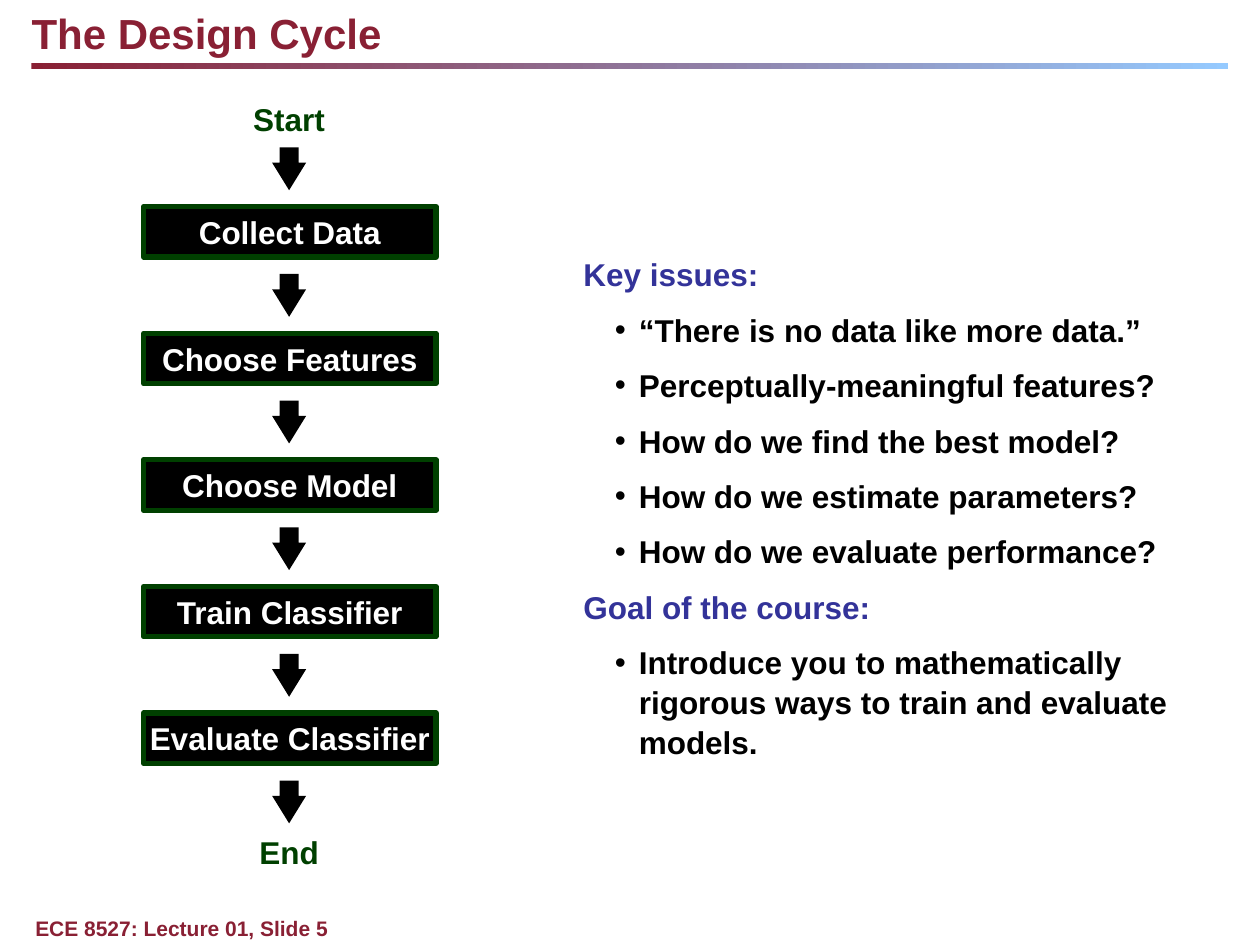
import pptx
import pptx.dml.color
import pptx.enum.shapes
import pptx.enum.text
import pptx.oxml.ns
import pptx.util
from lxml import etree

Inches = pptx.util.Inches
Pt = pptx.util.Pt
SHAPE = pptx.enum.shapes.MSO_SHAPE
ALIGN = pptx.enum.text.PP_ALIGN
ANCHOR = pptx.enum.text.MSO_ANCHOR

COLORS = {
    "maroon": "892034",
    "sky": "95CAFF",
    "green": "004000",
    "indigo": "333399",
    "black": "000000",
    "white": "FFFFFF",
}


def rgb(name):
    return pptx.dml.color.RGBColor.from_string(COLORS[name])


def write(paragraph, text, size, color, align=ALIGN.LEFT):
    paragraph.alignment = align
    run = paragraph.add_run()
    run.text = text
    font_format = {"name": "Arial", "size": Pt(size), "bold": True}
    for attribute, value in font_format.items():
        setattr(run.font, attribute, value)
    run.font.color.rgb = rgb(color)


presentation = pptx.Presentation()
presentation.slide_width = Inches(10)
presentation.slide_height = Inches(7.5)
slide = presentation.slides.add_slide(presentation.slide_layouts[1])
shapes = slide.shapes

frame_format = {
    "margin_left": 0,
    "margin_top": 0,
    "margin_right": 0,
    "margin_bottom": 0,
    "word_wrap": True,
    "auto_size": pptx.enum.text.MSO_AUTO_SIZE.NONE,
    "vertical_anchor": ANCHOR.TOP,
}

rule = shapes.add_shape(
    SHAPE.RECTANGLE, Inches(0.25), Inches(0.5), Inches(9.5), Inches(0.05)
)
rule.shadow.inherit = False
rule.line.fill.background()
rule.fill.gradient()
rule.fill.gradient_angle = 0
for stop, position, color in zip(rule.fill.gradient_stops, (0, 1), ("maroon", "sky")):
    stop.position = position
    stop.color.rgb = rgb(color)

title = shapes.title
title_place = {"left": 0.25, "top": 0.06, "width": 7.5, "height": 0.4}
for attribute, value in title_place.items():
    setattr(title, attribute, Inches(value))
for attribute, value in frame_format.items():
    setattr(title.text_frame, attribute, value)
write(title.text_frame.paragraphs[0], "The Design Cycle", 24, "maroon")

labels = [
    ("Start", 1.66, 0.79, 1.27, 0.3, 18, "green", ALIGN.CENTER),
    ("End", 1.66, 6.61, 1.27, 0.3, 18, "green", ALIGN.CENTER),
    ("ECE 8527: Lecture 01, Slide 5", 0.28, 7.27, 8.92, 0.2, 12, "maroon", ALIGN.LEFT),
]
for text, left, top, width, height, size, color, align in labels:
    label = shapes.add_textbox(
        Inches(left), Inches(top), Inches(width), Inches(height)
    )
    for attribute, value in frame_format.items():
        setattr(label.text_frame, attribute, value)
    write(label.text_frame.paragraphs[0], text, size, color, align)

steps = [
    "Collect Data",
    "Choose Features",
    "Choose Model",
    "Train Classifier",
    "Evaluate Classifier",
]
first_box_top, last_box_top = 1.64, 5.66
pitch = (last_box_top - first_box_top) / (len(steps) - 1)

for index, step in enumerate(steps):
    box = shapes.add_shape(
        SHAPE.RECTANGLE,
        Inches(1.14), Inches(first_box_top + index * pitch), Inches(2.32), Inches(0.4),
    )
    box.shadow.inherit = False
    box.fill.solid()
    box.fill.fore_color.rgb = rgb("black")
    box.line.color.rgb = rgb("green")
    box.line.width = Pt(3)
    for attribute, value in frame_format.items():
        setattr(box.text_frame, attribute, value)
    box.text_frame.vertical_anchor = ANCHOR.MIDDLE
    write(box.text_frame.paragraphs[0], step, 18, "white", ALIGN.CENTER)

for index in range(len(steps) + 1):
    arrow = shapes.add_shape(
        SHAPE.DOWN_ARROW,
        Inches(2.16), Inches(1.17 + index * pitch), Inches(0.27), Inches(0.34),
    )
    arrow.shadow.inherit = False
    arrow.adjustments[0] = 0.56
    arrow.adjustments[1] = 0.81
    arrow.fill.solid()
    arrow.fill.fore_color.rgb = rgb("black")
    arrow.line.fill.background()

issues = [
    (0, "Key issues:"),
    (1, "“There is no data like more data.”"),
    (1, "Perceptually-meaningful features?"),
    (1, "How do we find the best model?"),
    (1, "How do we estimate parameters?"),
    (1, "How do we evaluate performance?"),
    (0, "Goal of the course:"),
    (1, "Introduce you to mathematically rigorous ways to train and evaluate models."),
]
level_formats = [
    {"margin": 0.12, "indent": -0.12, "color": "indigo"},
    {"margin": 0.44, "indent": -0.19, "color": "black"},
]
body = slide.placeholders[1]
body_place = {"left": 4.53, "top": 1.96, "width": 5.2, "height": 4.19}
for attribute, value in body_place.items():
    setattr(body, attribute, Inches(value))
for attribute, value in frame_format.items():
    setattr(body.text_frame, attribute, value)
body.text_frame.margin_left = body.text_frame.margin_right = Inches(0.1)
body.text_frame.margin_top = body.text_frame.margin_bottom = Inches(0.05)

for index, (level, text) in enumerate(issues):
    paragraph = body.text_frame.add_paragraph() if index else body.text_frame.paragraphs[0]
    level_format = level_formats[level]
    paragraph.level = level
    paragraph.line_spacing = 1.05
    paragraph.space_before = Pt(9 if index else 0)
    properties = paragraph._p.get_or_add_pPr()
    properties.set("marL", str(Inches(level_format["margin"])))
    properties.set("indent", str(Inches(level_format["indent"])))
    if level:
        bullet = etree.SubElement(properties, pptx.oxml.ns.qn("a:buChar"))
        bullet.set("char", "•")
    else:
        etree.SubElement(properties, pptx.oxml.ns.qn("a:buNone"))
    write(paragraph, text, 18, level_format["color"])

presentation.save("out.pptx")
